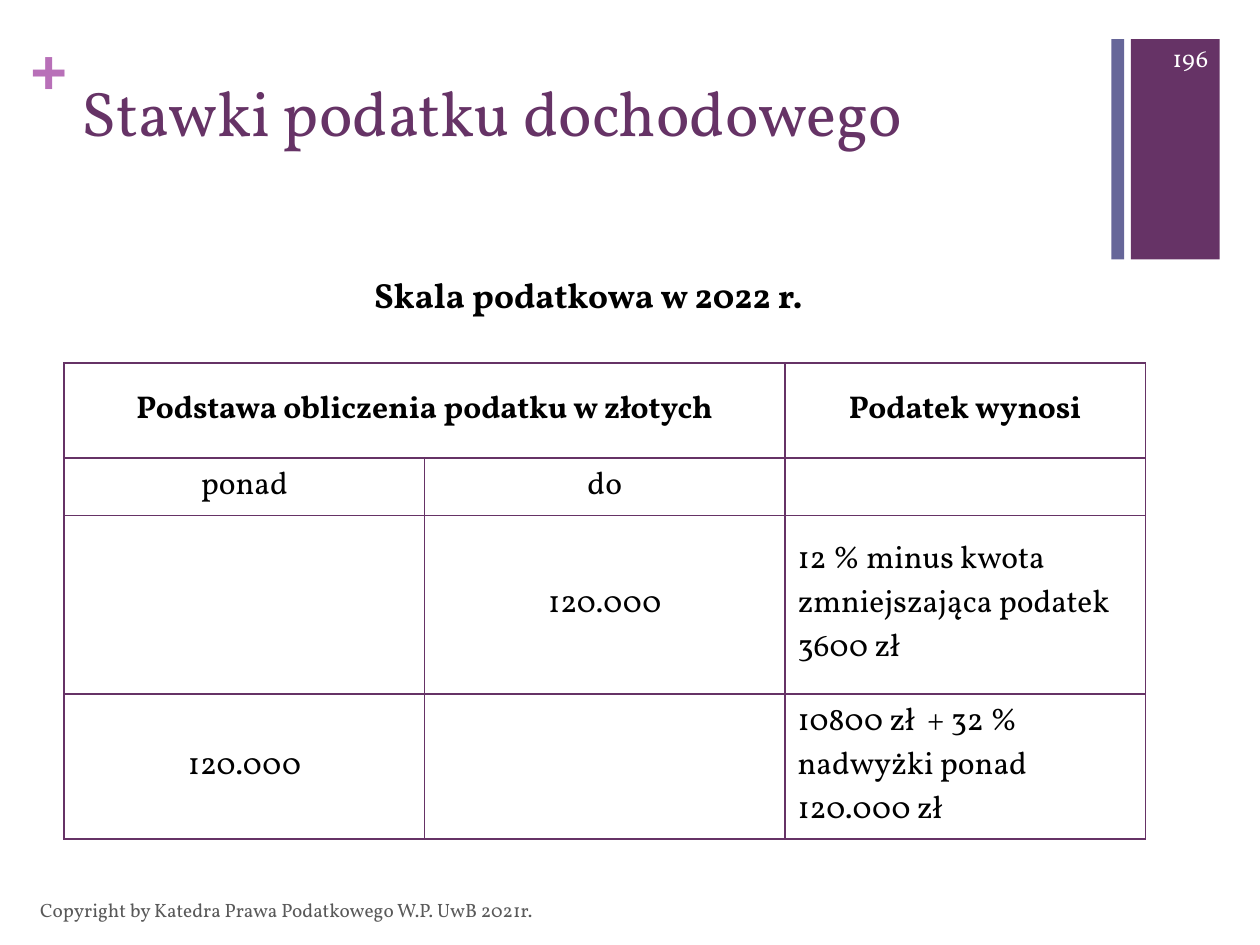
from lxml import etree
from pptx import Presentation
from pptx.dml.color import RGBColor
from pptx.enum.shapes import MSO_SHAPE
from pptx.enum.text import MSO_ANCHOR, MSO_AUTO_SIZE, PP_ALIGN
from pptx.oxml.ns import qn
from pptx.util import Inches, Pt

TOP, MIDDLE, BOTTOM = MSO_ANCHOR.TOP, MSO_ANCHOR.MIDDLE, MSO_ANCHOR.BOTTOM
LEFT, CENTER, RIGHT = PP_ALIGN.LEFT, PP_ALIGN.CENTER, PP_ALIGN.RIGHT
NO_AUTOFIT = MSO_AUTO_SIZE.NONE
RECTANGLE = MSO_SHAPE.RECTANGLE
COLORS = {"plum": "663366", "slate": "666699", "orchid": "B870B8",
          "gray": "595959", "black": "000000", "white": "FFFFFF"}
FONT = "Vollkorn"
GRID_UNIT = Inches(0.1)
TITLE_ONLY = 5
TITLE_BOX = (5.5, 5.3, 82.6, 12.2)
PLUS_BOX = (2.4, 2.5, 2.9, 6.1)
BANNER_BOX = (88.2, 3.1, 8.6, 17.5)
HEADING_BOX = (2, 17.8, 89.4, 7.7)
TABLE_BOX = (5.1, 28.8, 85.8, 37.8)
FOOTER_BOX = (2.2, 70.2, 67, 4)
ROW_SHARES = (0.2, 0.12, 0.375, 0.305)
RATES = (
    ("Podstawa obliczenia podatku w złotych", "", "Podatek wynosi"),
    ("ponad", "do", ""),
    ("", "120.000", "12 % minus kwota zmniejszająca podatek 3600 zł"),
    ("120.000", "", "10800 zł  + 32 % nadwyżki ponad 120.000 zł"),
)


def grid(box):
    """Turn a box in grid units into slide lengths."""
    return [int(value * GRID_UNIT) for value in box]


def write(frame, text, size, color, align=LEFT, bold=False, font=FONT):
    """Set one paragraph of text and format it."""
    frame.text = text
    para = frame.paragraphs[0]
    para.alignment = align
    para.font.size = Pt(size)
    for span in para.runs:
        span.font.name = font
        span.font.size = Pt(size)
        span.font.bold = bold
        span.font.color.rgb = RGBColor.from_string(COLORS[color])


def add_text(page, box, text, size, color, anchor=TOP, inset=True, **style):
    """Place a wrapping text box."""
    frame = page.shapes.add_textbox(*grid(box)).text_frame
    frame.word_wrap = True
    frame.vertical_anchor = anchor
    if not inset:
        frame.margin_left = frame.margin_right = 0
        frame.margin_top = frame.margin_bottom = 0
    write(frame, text, size, color, **style)


def add_title(page, box, text):
    """Move and format the title placeholder."""
    title = page.shapes.title
    title.left, title.top, title.width, title.height = grid(box)
    frame = title.text_frame
    frame.auto_size = NO_AUTOFIT
    frame.vertical_anchor = TOP
    write(frame, text, 36, "plum")


def add_banner(page, box, number):
    """Place the two corner bars and the page number."""
    left, top, width, height = box
    bars = ((0.18, 0.82, "plum"), (0, 0.12, "slate"))
    for offset, share, color in bars:
        place = (left + offset * width, top, share * width, height)
        bar = page.shapes.add_shape(RECTANGLE, *grid(place))
        bar.shadow.inherit = False
        bar.fill.solid()
        bar.fill.fore_color.rgb = RGBColor.from_string(COLORS[color])
        bar.line.fill.background()
    place = (left + 0.3 * width, top - 0.5, 0.71 * width, 4)
    add_text(page, place, number, 14, "white", MIDDLE, align=RIGHT)


def outline(cell):
    """Draw thin plum borders around a cell."""
    properties = cell._tc.get_or_add_tcPr()
    for side in ("a:lnL", "a:lnR", "a:lnT", "a:lnB"):
        line = etree.SubElement(properties, qn(side), w=str(Pt(1)))
        fill = etree.SubElement(line, qn("a:solidFill"))
        etree.SubElement(fill, qn("a:srgbClr"), val=COLORS["plum"])


def add_rates(page, box):
    """Place the tax scale table."""
    left, top, width, height = grid(box)
    table = page.shapes.add_table(len(RATES), len(RATES[0]),
                                  left, top, width, height).table
    table.first_row = table.horz_banding = False
    for row, share in zip(table.rows, ROW_SHARES):
        row.height = int(height * share)
    for row_index, texts in enumerate(RATES):
        for column_index, text in enumerate(texts):
            cell = table.cell(row_index, column_index)
            outline(cell)
            cell.fill.background()
            cell.vertical_anchor = MIDDLE
            is_rate = row_index > 1 and column_index == 2
            write(cell.text_frame, text, 18, "black",
                  LEFT if is_rate else CENTER, bold=row_index == 0)
    table.cell(0, 0).merge(table.cell(0, 1))


def main():
    """Build and save the deck."""
    deck = Presentation()
    deck.slide_width, deck.slide_height = Inches(10), Inches(7.5)
    page = deck.slides.add_slide(deck.slide_layouts[TITLE_ONLY])
    add_banner(page, BANNER_BOX, "196")
    add_text(page, PLUS_BOX, "+", 36, "orchid", inset=False,
             bold=True, font="Arial")
    add_title(page, TITLE_BOX, "Stawki podatku dochodowego")
    add_text(page, FOOTER_BOX,
             "Copyright by Katedra Prawa Podatkowego W.P. UwB 2021r.",
             11, "gray", MIDDLE)
    add_rates(page, TABLE_BOX)
    add_text(page, HEADING_BOX, "Skala podatkowa w 2022 r.", 20, "black",
             BOTTOM, align=CENTER, bold=True)
    deck.save("out.pptx")


if __name__ == "__main__":
    main()
